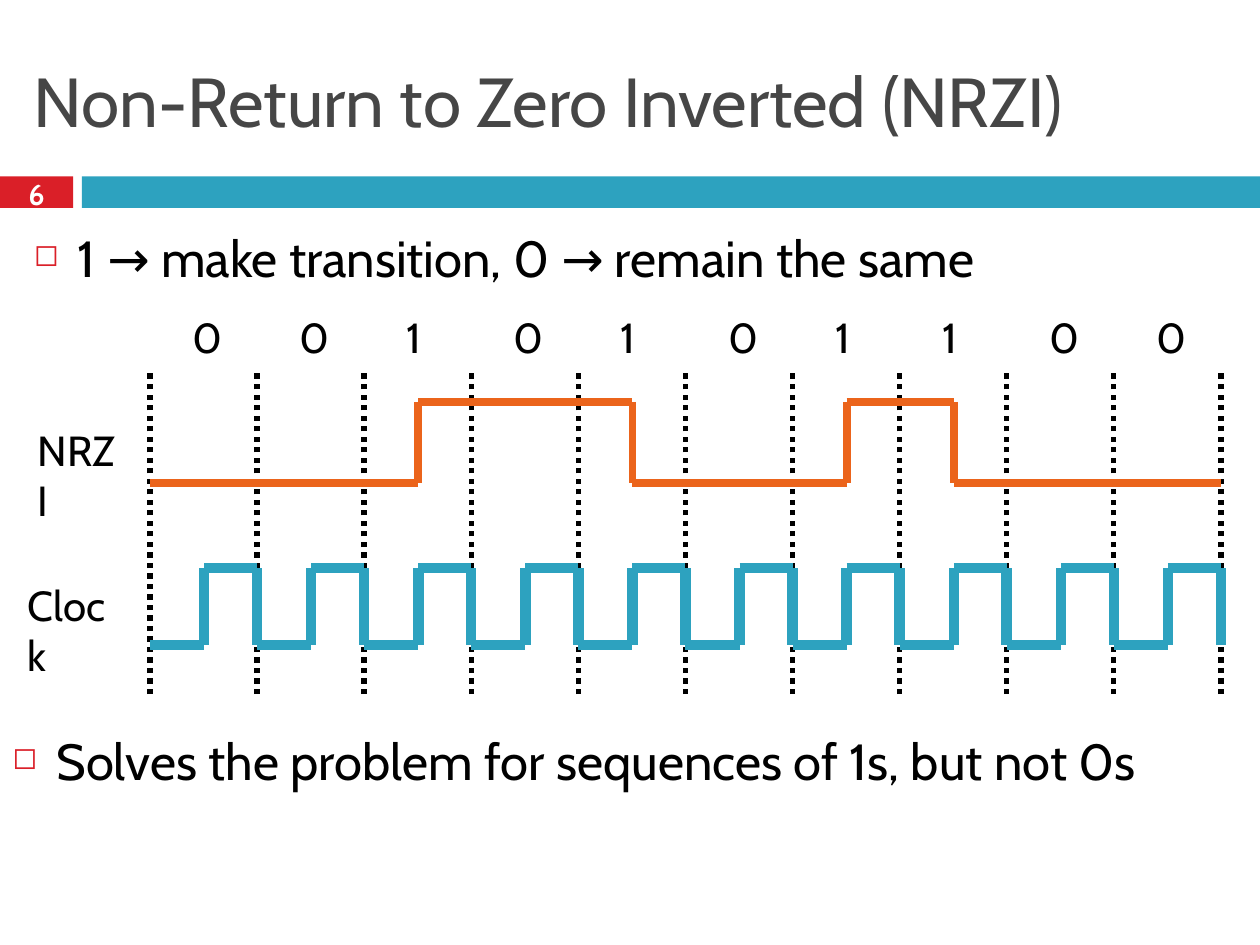
import dataclasses
import itertools

import lxml.etree
import pptx
import pptx.dml.color
import pptx.enum.dml
import pptx.enum.shapes
import pptx.enum.text
import pptx.oxml.ns
import pptx.util

Inches = pptx.util.Inches
Pt = pptx.util.Pt
Align = pptx.enum.text.PP_ALIGN
Anchor = pptx.enum.text.MSO_ANCHOR
Dash = pptx.enum.dml.MSO_LINE

RED, BLUE, ORANGE, BLACK = "DA1F28", "2DA2BF", "EB641B", "000000"
BITS = "0010101100"
LEFT, STEP, HALF = 1.19, 0.85, 0.43


@dataclasses.dataclass
class Label:
    text: str
    x: float
    y: float
    w: float
    h: float
    size: float = 24
    color: str = BLACK
    bold: bool = False
    bullet: bool = False
    align: Align = Align.LEFT
    anchor: Anchor = Anchor.TOP


@dataclasses.dataclass
class Stroke:
    points: list[tuple[float, float]]
    color: str
    width: float
    dash: Dash | None = None


def rgb(code: str) -> pptx.dml.color.RGBColor:
    return pptx.dml.color.RGBColor.from_string(code)


def add_bar(slide, x: float, w: float, color: str) -> None:
    bar = slide.shapes.add_shape(
        pptx.enum.shapes.MSO_SHAPE.RECTANGLE,
        Inches(x), Inches(1.4), Inches(w), Inches(0.25))
    bar.shadow.inherit = False
    bar.fill.solid()
    bar.fill.fore_color.rgb = rgb(color)
    bar.line.fill.background()


def add_bullet(para) -> None:
    para.space_before = Pt(7)
    props = para._p.get_or_add_pPr()
    props.set("marL", str(Inches(0.35)))
    props.set("indent", str(-Inches(0.35)))
    qn = pptx.oxml.ns.qn
    tint = lxml.etree.SubElement(props, qn("a:buClr"))
    lxml.etree.SubElement(tint, qn("a:srgbClr"), val=RED)
    lxml.etree.SubElement(props, qn("a:buSzPct"), val="60000")
    lxml.etree.SubElement(props, qn("a:buChar"), char="◻")


def add_label(slide, label: Label) -> None:
    box = slide.shapes.add_textbox(
        Inches(label.x), Inches(label.y), Inches(label.w), Inches(label.h))
    frame = box.text_frame
    frame.word_wrap = True
    frame.vertical_anchor = label.anchor
    para = frame.paragraphs[0]
    para.text = label.text
    para.alignment = label.align
    if label.bullet:
        add_bullet(para)
    para.font.name = "Cabin"
    para.font.size = Pt(label.size)
    para.font.bold = label.bold
    para.font.color.rgb = rgb(label.color)


def add_stroke(slide, stroke: Stroke) -> None:
    for (x1, y1), (x2, y2) in itertools.pairwise(stroke.points):
        line = slide.shapes.add_connector(
            pptx.enum.shapes.MSO_CONNECTOR.STRAIGHT,
            Inches(x1), Inches(y1), Inches(x2), Inches(y2))
        line.line.color.rgb = rgb(stroke.color)
        line.line.width = Pt(stroke.width)
        if stroke.dash:
            line.line.dash_style = stroke.dash
        lxml.etree.SubElement(
            line._element.spPr, pptx.oxml.ns.qn("a:effectLst"))


def clock_wave(low: float, high: float) -> list[tuple[float, float]]:
    points = [(LEFT, low)]
    for i in range(len(BITS)):
        x = LEFT + i * STEP
        points += [(x + HALF, low), (x + HALF, high),
                   (x + STEP, high), (x + STEP, low)]
    return points


def nrzi_wave(low: float, high: float) -> list[tuple[float, float]]:
    points, level, other = [(LEFT, low)], low, high
    for i, bit in enumerate(BITS):
        if bit == "1":
            x = LEFT + i * STEP + HALF
            points += [(x, level), (x, other)]
            level, other = other, level
    return points + [(LEFT + len(BITS) * STEP, level)]


def main() -> None:
    """Build the NRZI encoding slide."""
    deck = pptx.Presentation()
    deck.slide_width, deck.slide_height = Inches(10), Inches(7.5)
    slide = deck.slides.add_slide(deck.slide_layouts[6])

    add_bar(slide, 0, 0.58, RED)
    add_bar(slide, 0.65, 9.35, BLUE)

    grid = [LEFT + i * STEP for i in range(len(BITS) + 1)]
    strokes = [Stroke([(x, 5.51), (x, 2.93)], BLACK, 3, Dash.ROUND_DOT)
               for x in grid]
    strokes += [Stroke(clock_wave(5.12, 4.51), BLUE, 6),
                Stroke(nrzi_wave(3.83, 3.19), ORANGE, 4.5)]
    for stroke in strokes:
        add_stroke(slide, stroke)

    labels = [
        Label("Non-Return to Zero Inverted (NRZI)", 0.17, 0.25, 9.67, 1.08,
              39.6, "464646", anchor=Anchor.MIDDLE),
        Label("6", 0, 1.37, 0.58, 0.33, 16.6, "FFFFFF", bold=True,
              align=Align.CENTER, anchor=Anchor.MIDDLE),
        Label("1 → make transition, 0 → remain the same",
              0.17, 1.75, 9.67, 0.67, 29, bullet=True),
        Label("Clock", 0.12, 4.55, 0.93, 0.5),
        Label("NRZI", 0.2, 3.32, 0.84, 0.5),
        Label("Solves the problem for sequences of 1s, but not 0s",
              0, 5.74, 10, 0.67, 29, bullet=True),
    ]
    labels += [Label(bit, x + 0.24, 2.42, 0.39, 0.5)
               for bit, x in zip(BITS, grid)]
    for label in labels:
        add_label(slide, label)

    deck.save("out.pptx")


if __name__ == "__main__":
    main()
